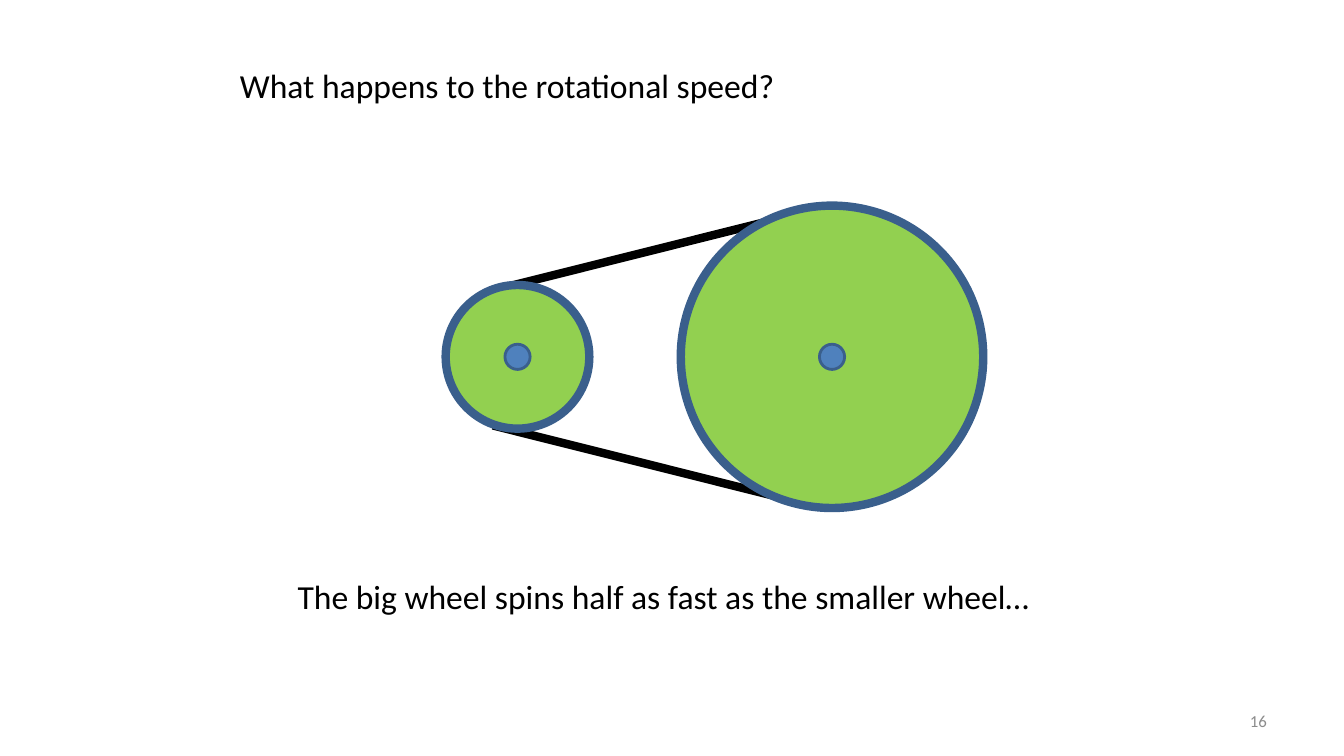
import pptx
import pptx.util
import pptx.dml.color
import pptx.enum.shapes
import pptx.enum.text
import pptx.oxml.ns
from lxml import etree

W, H = 13.33, 7.5
FONT = "Calibri"
BLACK, GREY, GREEN, BLUE, RIM = "000000", "8C8C8C", "92D050", "4F81BD", "3A5F8C"

Inches, Pt = pptx.util.Inches, pptx.util.Pt
ALIGN = pptx.enum.text.PP_ALIGN
ANCHOR = pptx.enum.text.MSO_ANCHOR


def rgb(value):
    return pptx.dml.color.RGBColor.from_string(value)


def set_text(sp, box, text, size=24, color=BLACK, align=ALIGN.LEFT, anchor=ANCHOR.TOP):
    """Place a text shape in its box and format its single paragraph."""
    for name, value in zip(("left", "top", "width", "height"), box):
        setattr(sp, name, Inches(value))
    tf = sp.text_frame
    frame = {"word_wrap": True, "vertical_anchor": anchor,
             "auto_size": pptx.enum.text.MSO_AUTO_SIZE.NONE}
    for name, value in frame.items():
        setattr(tf, name, value)
    p = tf.paragraphs[0]
    p.alignment = align
    r = p.add_run()
    r.text = text
    for name, value in {"name": FONT, "size": Pt(size), "bold": False}.items():
        setattr(r.font, name, value)
    r.font.color.rgb = rgb(color)


def add_text(s, box, text, **style):
    set_text(s.shapes.add_textbox(0, 0, 0, 0), box, text, **style)


def add_disc(s, cx, cy, d, fill, line_width):
    """Draw a circle around a centre."""
    sp = s.shapes.add_shape(pptx.enum.shapes.MSO_SHAPE.OVAL, Inches(cx - d / 2),
                            Inches(cy - d / 2), Inches(d), Inches(d))
    sp.shadow.inherit = False
    sp.fill.solid()
    sp.fill.fore_color.rgb = rgb(fill)
    sp.line.color.rgb = rgb(RIM)
    sp.line.width = Pt(line_width)


def add_belt(s, x1, y1, x2, y2):
    belt = s.shapes.add_connector(pptx.enum.shapes.MSO_CONNECTOR.STRAIGHT,
                                  Inches(x1), Inches(y1), Inches(x2), Inches(y2))
    belt.line.color.rgb = rgb(BLACK)
    belt.line.width = Pt(6)
    etree.SubElement(belt._element.spPr, pptx.oxml.ns.qn("a:effectLst"))


def add_belt_drive(s, x, y, w, h):
    """Two wheels on one axis line, at the ends of the box, joined by a belt."""
    small, big, hub = 0.475 * h, h, h / 12
    axis = y + h / 2
    centres = (x + small / 2, x + w - big / 2)

    # Belt runs, behind the wheels: start height, end across and end height
    for start, across, end in ((0.28, 0.694, 0.01), (0.727, 0.679, 0.99)):
        add_belt(s, x + 0.088 * w, y + start * h, x + across * w, y + end * h)

    # Wheels, then their hubs
    for cx, d in zip(centres, (small, big)):
        add_disc(s, cx, axis, d, GREEN, 6)
    for cx in centres:
        add_disc(s, cx, axis, hub, BLUE, 2)


def build_slide(prs):
    s = prs.slides.add_slide(prs.slide_layouts[5])

    # Question
    set_text(s.shapes.title, (0.171 * W, 0.079 * H, 0.56 * W, 0.067 * H),
             "What happens to the rotational speed?")

    # Diagram
    add_belt_drive(s, 0.3316 * W, 0.272 * H, 0.4 * W, 0.4 * H)

    # Answer and slide number
    add_text(s, (0.214 * W, 0.755 * H, 0.579 * W, 0.067 * H),
             "The big wheel spins half as fast as the smaller wheel…")
    add_text(s, (0.717 * W, 0.927 * H, 0.233 * W, 0.053 * H), "16",
             size=12, color=GREY, align=ALIGN.RIGHT, anchor=ANCHOR.MIDDLE)


def main():
    prs = pptx.Presentation()
    prs.slide_width, prs.slide_height = Inches(W), Inches(H)
    build_slide(prs)
    prs.save("out.pptx")


if __name__ == "__main__":
    main()
